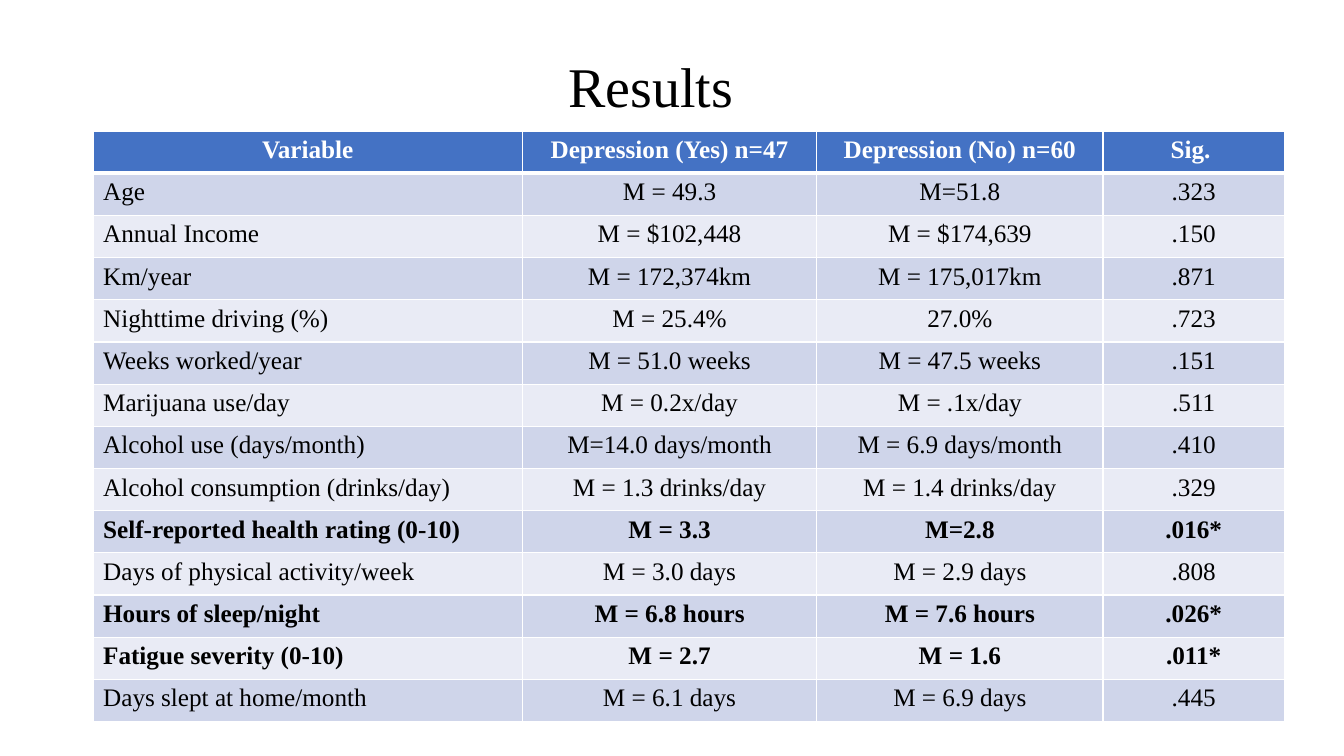
import lxml.etree
import pptx
import pptx.dml.color
import pptx.enum.text
import pptx.oxml.ns
import pptx.util

Pt = pptx.util.Pt
RGBColor = pptx.dml.color.RGBColor
ALIGN = pptx.enum.text.PP_ALIGN
ANCHOR = pptx.enum.text.MSO_ANCHOR
qn = pptx.oxml.ns.qn

BLACK = RGBColor(0x00, 0x00, 0x00)
WHITE = RGBColor(0xFF, 0xFF, 0xFF)
HEADER_BLUE = RGBColor(0x44, 0x72, 0xC4)
BANDS = (RGBColor(0xCF, 0xD5, 0xEA), RGBColor(0xE9, 0xEB, 0xF5))

COLUMN_WIDTHS = (306.7, 210.2, 204.5, 129.6)
ROW_HEIGHT = 30.14
RESULTS = (
    ("Variable", "Depression (Yes) n=47", "Depression (No) n=60", "Sig. "),
    ("Age", "M = 49.3", "M=51.8", ".323"),
    ("Annual Income", "M = $102,448", "M = $174,639", ".150"),
    ("Km/year", "M = 172,374km", "M = 175,017km", ".871"),
    ("Nighttime driving (%)", "M = 25.4%", "27.0%", ".723"),
    ("Weeks worked/year", "M = 51.0 weeks", "M = 47.5 weeks", ".151"),
    ("Marijuana use/day", "M = 0.2x/day", "M = .1x/day", ".511"),
    ("Alcohol use (days/month)", "M=14.0 days/month", "M = 6.9 days/month", ".410"),
    ("Alcohol consumption (drinks/day)", "M = 1.3 drinks/day", "M = 1.4 drinks/day", ".329"),
    ("Self-reported health rating (0-10)", "M = 3.3", "M=2.8", ".016*"),
    ("Days of physical activity/week", "M = 3.0 days", "M = 2.9 days", ".808"),
    ("Hours of sleep/night", "M = 6.8 hours", "M = 7.6 hours", ".026*"),
    ("Fatigue severity (0-10)", "M = 2.7", "M = 1.6", ".011*"),
    ("Days slept at home/month", "M = 6.1 days", "M = 6.9 days", ".445"),
)


class SlideBuilder:
    font_name = "Times New Roman"

    def __init__(self, slide):
        self.slide = slide

    def add_text(self, tf, text, size, color, bold=False, align=ALIGN.LEFT):
        p = tf.paragraphs[0]
        p.alignment = align
        r = p.add_run()
        r.text = text
        style = {"name": self.font_name, "size": Pt(size), "bold": bold}
        for name, value in style.items():
            setattr(r.font, name, value)
        r.font.color.rgb = color
        return p

    def title(self, text, left, top, width, height):
        sp = self.slide.shapes.add_textbox(Pt(left), Pt(top), Pt(width), Pt(height))
        tf = sp.text_frame
        tf.word_wrap = True
        tf.vertical_anchor = ANCHOR.MIDDLE
        self.add_text(tf, text, 40, BLACK).line_spacing = 0.9

    def borders(self, cell, widths):
        """Draw white cell edges; widths maps L, R, T, B to points."""
        tc_pr = cell._tc.get_or_add_tcPr()
        for i, (side, width) in enumerate(widths.items()):
            ln = lxml.etree.Element(qn(f"a:ln{side}"), w=str(Pt(width)))
            fill = lxml.etree.SubElement(ln, qn("a:solidFill"))
            lxml.etree.SubElement(fill, qn("a:srgbClr"), val=str(WHITE))
            tc_pr.insert(i, ln)

    def table(self, rows, left, top, widths, row_height):
        """Add a banded table; rows with a starred last cell are bold."""
        table = self.slide.shapes.add_table(
            len(rows), len(widths), Pt(left), Pt(top),
            Pt(sum(widths)), Pt(row_height * len(rows))).table
        for column, width in zip(table.columns, widths):
            column.width = Pt(width)
        for i, values in enumerate(rows):
            table.rows[i].height = Pt(row_height)
            header = i == 0
            bold = header or values[-1].endswith("*")
            fill = HEADER_BLUE if header else BANDS[(i - 1) % 2]
            edges = {"L": 1, "R": 1, "T": 3 if i == 1 else 1, "B": 3 if header else 1}
            for j, text in enumerate(values):
                cell = table.cell(i, j)
                cell.fill.solid()
                cell.fill.fore_color.rgb = fill
                self.borders(cell, edges)
                align = ALIGN.CENTER if header or j else ALIGN.LEFT
                self.add_text(cell.text_frame, text, 18, WHITE if header else BLACK, bold, align)


def main():
    prs = pptx.Presentation()
    prs.slide_width, prs.slide_height = Pt(960), Pt(540)
    s = SlideBuilder(prs.slides.add_slide(prs.slide_layouts[6]))
    s.title("Results", 399, 11.5, 142.6, 104.4)
    s.table(RESULTS, 66.5, 93.6, COLUMN_WIDTHS, ROW_HEIGHT)
    prs.save("out.pptx")


if __name__ == "__main__":
    main()
